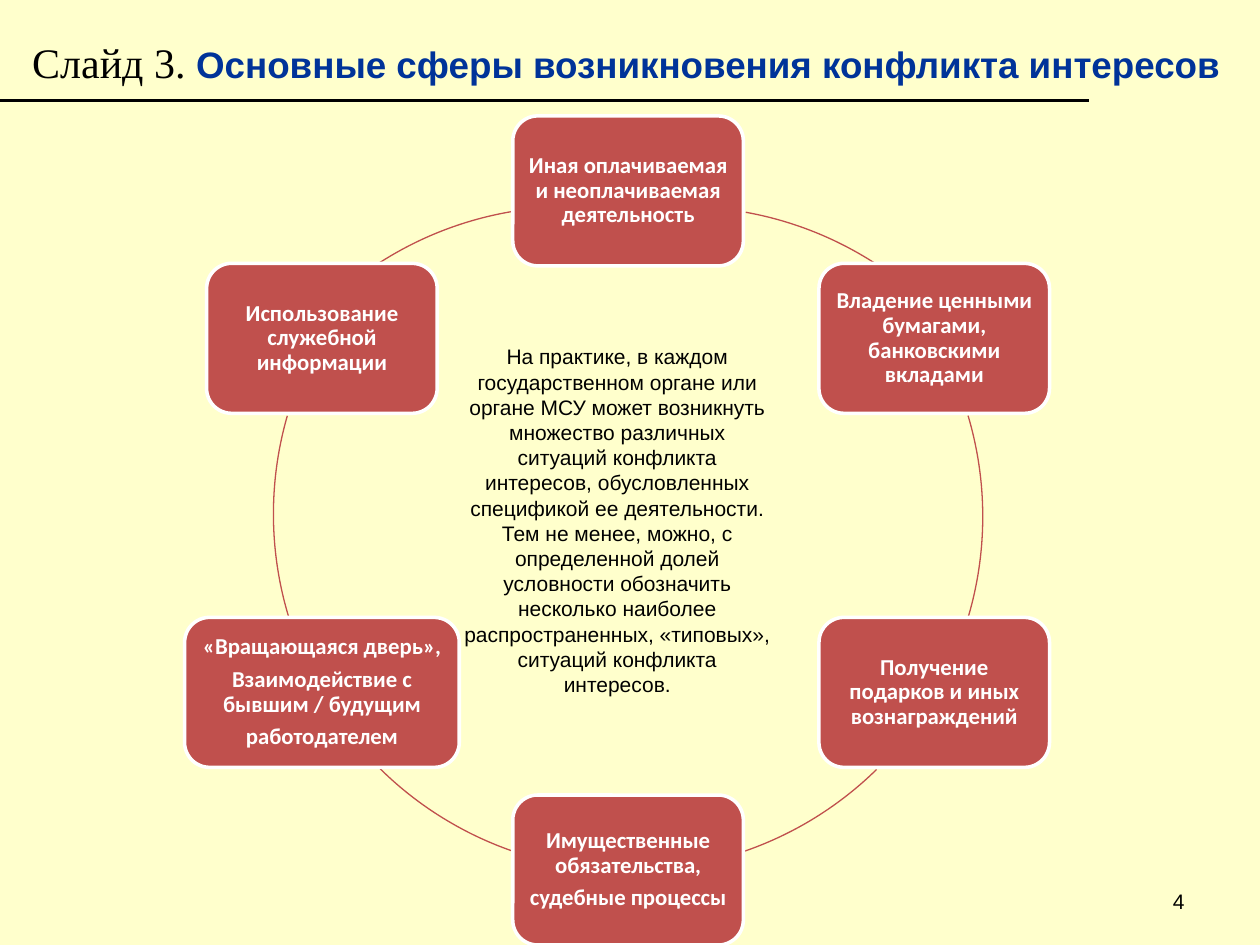
from math import atan2, degrees

from lxml import etree
from pptx import Presentation
from pptx.dml.color import RGBColor
from pptx.enum.shapes import MSO_CONNECTOR, MSO_SHAPE
from pptx.enum.text import MSO_ANCHOR, PP_ALIGN
from pptx.oxml.ns import qn
from pptx.util import Inches, Pt

LINE = MSO_CONNECTOR.STRAIGHT
ROUNDED, ARC = MSO_SHAPE.ROUNDED_RECTANGLE, MSO_SHAPE.ARC
TOP, MIDDLE = MSO_ANCHOR.TOP, MSO_ANCHOR.MIDDLE
CENTER, RIGHT = PP_ALIGN.CENTER, PP_ALIGN.RIGHT

COLORS = {"background": "FFFFCC", "text": "000000", "title": "003399",
          "box": "C0504D", "white": "FFFFFF"}
TITLE_ONLY = 5
CENTER_X = 4.985
BOX_W, WIDE_BOX_W, BOX_H = 1.83, 2.18, 1.19
SIDE_OFFSET = 2.43
RING_SIZE = 5.62

BOXES = [
    (0, 0.92, BOX_W, ["Иная оплачиваемая и неоплачиваемая деятельность"]),
    (SIDE_OFFSET, 2.09, BOX_W, ["Владение ценными бумагами, банковскими вкладами"]),
    (SIDE_OFFSET, 4.9, BOX_W, ["Получение подарков и иных вознаграждений"]),
    (0, 6.31, BOX_W, ["Имущественные обязательства,", "судебные процессы"]),
    (-SIDE_OFFSET, 4.9, WIDE_BOX_W, ["«Вращающаяся дверь»,",
                                     "Взаимодействие с бывшим / будущим",
                                     "работодателем"]),
    (-SIDE_OFFSET, 2.09, BOX_W, ["Использование служебной информации"]),
]
ARCS = [
    ((2.61, 1.64), (5.92, 1.68), (6.95, 2.09)),
    ((2.18, 1.29), (7.68, 3.3), (7.68, 4.89)),
    ((2.18, 1.29), (6.95, 6.1), (5.91, 6.75)),
    ((2.18, 1.29), (4.06, 6.75), (3.02, 6.1)),
    ((2.17, 1.27), (2.29, 4.89), (2.28, 3.3)),
    ((1.72, 1.64), (3, 2.09), (4.06, 1.68)),
]
PRACTICE = (
    "На практике, в каждом государственном органе или органе МСУ может "
    "возникнуть множество различных ситуаций конфликта интересов, "
    "обусловленных спецификой ее деятельности. Тем не менее, можно, с "
    "определенной долей условности обозначить несколько наиболее "
    "распространенных, «типовых», ситуаций конфликта интересов."
)


def rgb(name):
    return RGBColor.from_string(COLORS[name])


def format_run(r, size, font, color, bold=False):
    r.font.size = Pt(size)
    r.font.name = font
    r.font.bold = bold
    r.font.color.rgb = rgb(color)


def set_frame(tf, anchor, inset_x=0.1, inset_y=0.05):
    tf.word_wrap = True
    tf.vertical_anchor = anchor
    tf.margin_left = tf.margin_right = Inches(inset_x)
    tf.margin_top = tf.margin_bottom = Inches(inset_y)


def add_title(s):
    sp = s.shapes.title
    sp.left, sp.top = Inches(0.07), Inches(0.24)
    sp.width, sp.height = Inches(9.8), Inches(0.5)
    set_frame(sp.text_frame, TOP)
    p = sp.text_frame.paragraphs[0]
    p.alignment = CENTER
    p.line_spacing = 1.0
    p.space_before = Pt(4)
    for text, style in [
        ("Слайд 3. ", (24, "Times New Roman", "text")),
        ("Основные сферы возникновения конфликта интересов", (21, "Arial", "title", True)),
    ]:
        r = p.add_run()
        r.text = text
        format_run(r, *style)


def add_text(s, left, top, width, height, text, align, anchor):
    sp = s.shapes.add_textbox(Inches(left), Inches(top), Inches(width), Inches(height))
    set_frame(sp.text_frame, anchor)
    p = sp.text_frame.paragraphs[0]
    p.text = text
    p.alignment = align
    format_run(p.runs[0], 12, "Arial", "text")


def add_rule(s):
    line = s.shapes.add_connector(LINE, 0, Inches(0.8), Inches(8.64), Inches(0.8))
    line.line.color.rgb = rgb("text")
    line.line.width = Pt(1.5)
    etree.SubElement(line.line._get_or_add_ln().getparent(), qn("a:effectLst"))


def add_arc(s, origin, start, end):
    left, top = origin
    size = Inches(RING_SIZE)
    sp = s.shapes.add_shape(ARC, Inches(left), Inches(top), size, size)
    sp.shadow.inherit = False
    sp.fill.background()
    sp.line.color.rgb = rgb("box")
    sp.line.width = Pt(0.75)
    for i, (x, y) in enumerate((start, end)):
        angle = degrees(atan2(y - top - RING_SIZE / 2, x - left - RING_SIZE / 2)) % 360
        sp.adjustments[i] = angle * 0.6


def add_box(s, offset, top, width, lines):
    left = CENTER_X + offset - width / 2
    sp = s.shapes.add_shape(ROUNDED, Inches(left), Inches(top), Inches(width), Inches(BOX_H))
    sp.shadow.inherit = False
    sp.fill.solid()
    sp.fill.fore_color.rgb = rgb("box")
    sp.line.color.rgb = rgb("white")
    sp.line.width = Pt(2)
    tf = sp.text_frame
    set_frame(tf, MIDDLE, 0.05)
    tf.text = "\n".join(lines)
    for p in tf.paragraphs:
        p.alignment = CENTER
        p.line_spacing = 0.9
        p.space_after = Pt(4.5)
        format_run(p.runs[0], 13, "Calibri", "white", True)


def main():
    prs = Presentation()
    prs.slide_width, prs.slide_height = Inches(10), Inches(7.5)
    s = prs.slides.add_slide(prs.slide_layouts[TITLE_ONLY])
    s.background.fill.solid()
    s.background.fill.fore_color.rgb = rgb("background")
    add_title(s)
    add_text(s, 7.17, 6.95, 2.33, 0.4, "4", RIGHT, MIDDLE)
    add_rule(s)
    for arc in ARCS:
        add_arc(s, *arc)
    for box in BOXES:
        add_box(s, *box)
    add_text(s, 3.58, 2.68, 2.64, 2.93, PRACTICE, CENTER, TOP)
    prs.save("out.pptx")


if __name__ == "__main__":
    main()
